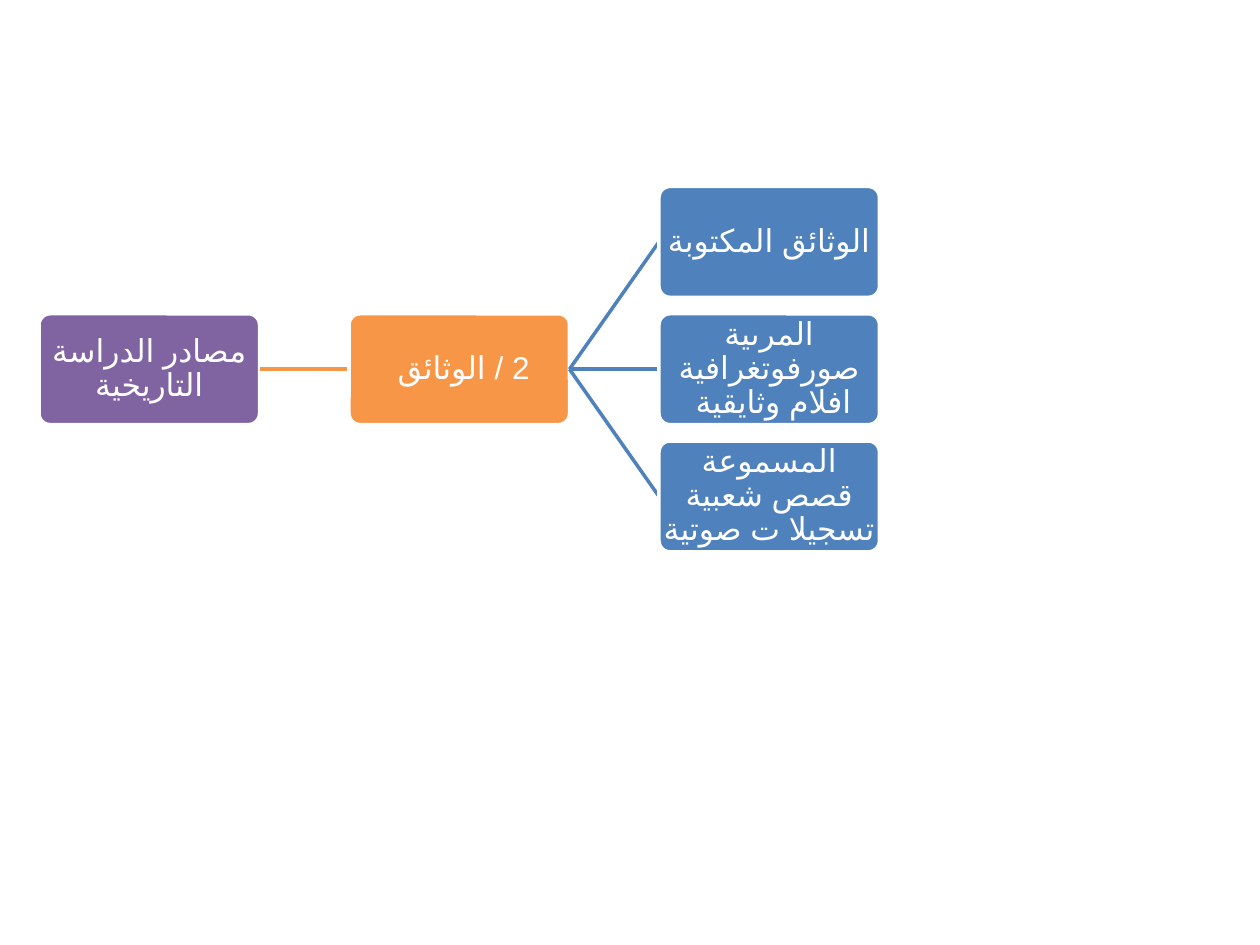
from dataclasses import dataclass

from pptx import Presentation
from pptx.dml.color import RGBColor as RGB
from pptx.enum.lang import MSO_LANGUAGE_ID as Language
from pptx.enum.shapes import MSO_CONNECTOR as Connector, MSO_SHAPE as Shape
from pptx.enum.text import MSO_ANCHOR as Anchor, PP_ALIGN as Align
from pptx.oxml.ns import qn
from pptx.oxml.xmlchemy import OxmlElement
from pptx.util import Inches, Pt


@dataclass(frozen=True)
class Theme:
    root: RGB = RGB(0x80, 0x64, 0xA2)
    branch: RGB = RGB(0xF7, 0x96, 0x46)
    leaf: RGB = RGB(0x4F, 0x81, 0xBD)
    white: RGB = RGB(0xFF, 0xFF, 0xFF)
    font: str = "Calibri"
    arabic_font: str = "Arial"
    size: int = 18
    line: int = 2


@dataclass(frozen=True)
class Node:
    text: str
    column: int
    row: int
    color: RGB

    @property
    def left(self) -> float:
        return LEFT + self.column * COLUMN_STEP

    @property
    def top(self) -> float:
        return TOP + self.row * ROW_STEP

    @property
    def middle(self) -> float:
        return self.top + BOX_H / 2


THEME = Theme()

# Tree grid, in inches
LEFT, TOP = 0.31, 1.48
BOX_W, BOX_H = 1.75, 0.88
COLUMN_STEP, ROW_STEP = 2.46, 1.01
INSET = 0.01

ROOT = Node("مصادر الدراسة التاريخية", 0, 1, THEME.root)
BRANCH = Node("2 / الوثائق ", 1, 1, THEME.branch)
LEAVES = [
    Node(text, 2, row, THEME.leaf)
    for row, text in enumerate([
        "الوثائق المكتوبة",
        "المرىية صورفوتغرافية افلام وثايقية ",
        "المسموعة قصص شعبية تسجيلا ت صوتية",
    ])
]


def write_text(sp, text: str, *, size: int = THEME.size, color: RGB = THEME.white,
               font: str = THEME.font, arabic_font: str = THEME.arabic_font,
               spacing: float = 0.9) -> None:
    """Fill a shape with one centred right-to-left paragraph."""
    tf = sp.text_frame
    tf.word_wrap = True
    tf.vertical_anchor = Anchor.MIDDLE
    tf.margin_left = tf.margin_right = Inches(INSET)
    tf.margin_top = tf.margin_bottom = Inches(INSET)
    p = tf.paragraphs[0]
    p.alignment = Align.CENTER
    p.line_spacing = spacing
    p._p.get_or_add_pPr().set("rtl", "1")
    r = p.add_run()
    r.text = text
    r.font.name = font
    r.font.size = Pt(size)
    r.font.color.rgb = color
    r.font.language_id = Language.ARABIC
    # Arabic letters take the complex-script font
    cs = OxmlElement("a:cs")
    cs.set("typeface", arabic_font)
    r._r.get_or_add_rPr().append(cs)


def draw_node(s, node: Node) -> None:
    sp = s.shapes.add_shape(Shape.ROUNDED_RECTANGLE, Inches(node.left), Inches(node.top),
                            Inches(BOX_W), Inches(BOX_H))
    sp.adjustments[0] = 0.1
    sp.shadow.inherit = False
    sp.fill.solid()
    sp.fill.fore_color.rgb = node.color
    sp.line.color.rgb = THEME.white
    sp.line.width = Pt(THEME.line)
    write_text(sp, node.text)


def draw_link(s, parent: Node, child: Node) -> None:
    """Join the parent's right side to the child's left side."""
    link = s.shapes.add_connector(Connector.STRAIGHT,
                                  Inches(parent.left + BOX_W), Inches(parent.middle),
                                  Inches(child.left), Inches(child.middle))
    link.line.color.rgb = child.color
    link.line.width = Pt(THEME.line)
    link._element.find(qn("p:spPr")).append(OxmlElement("a:effectLst"))


def main() -> None:
    prs = Presentation()
    prs.slide_width, prs.slide_height = Inches(10), Inches(7.5)
    s = prs.slides.add_slide(prs.slide_layouts[6])

    # Each link lies behind the box it leads to
    draw_node(s, ROOT)
    for parent, child in [(ROOT, BRANCH)] + [(BRANCH, leaf) for leaf in LEAVES]:
        draw_link(s, parent, child)
        draw_node(s, child)

    prs.save("out.pptx")


if __name__ == "__main__":
    main()
